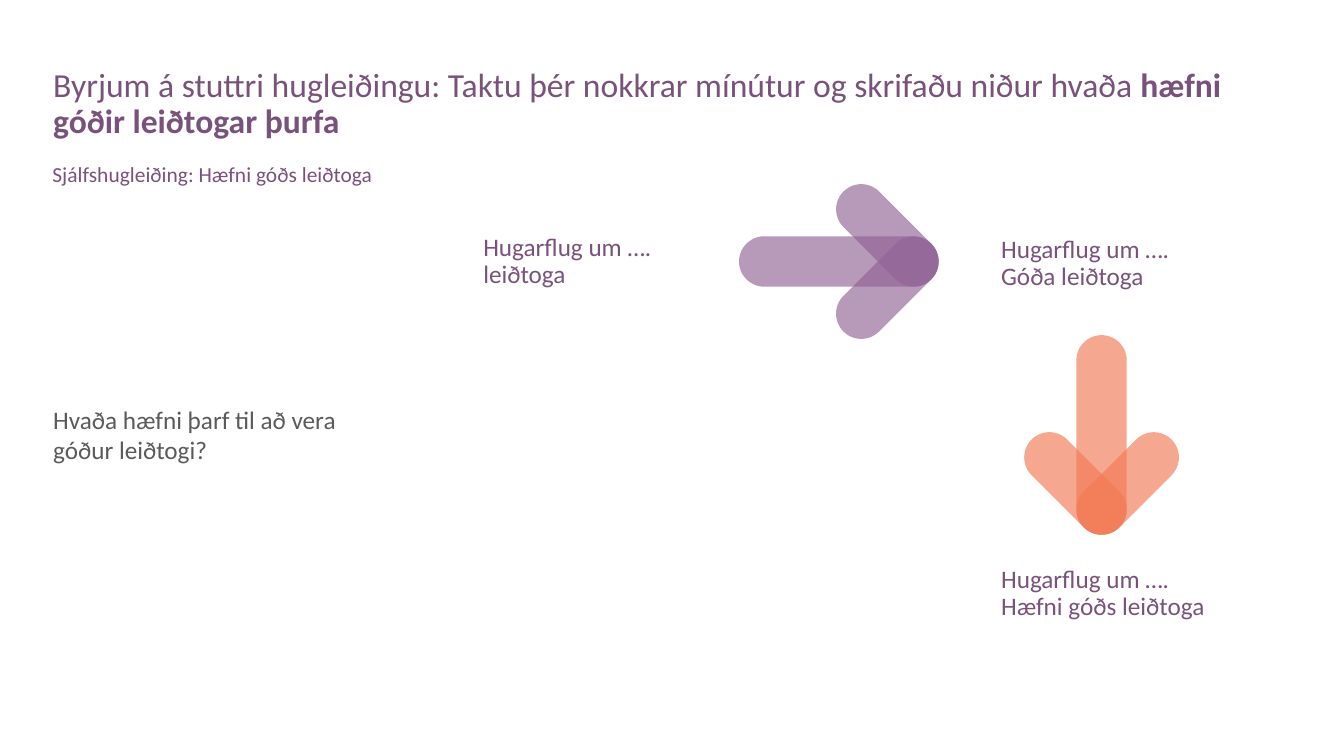
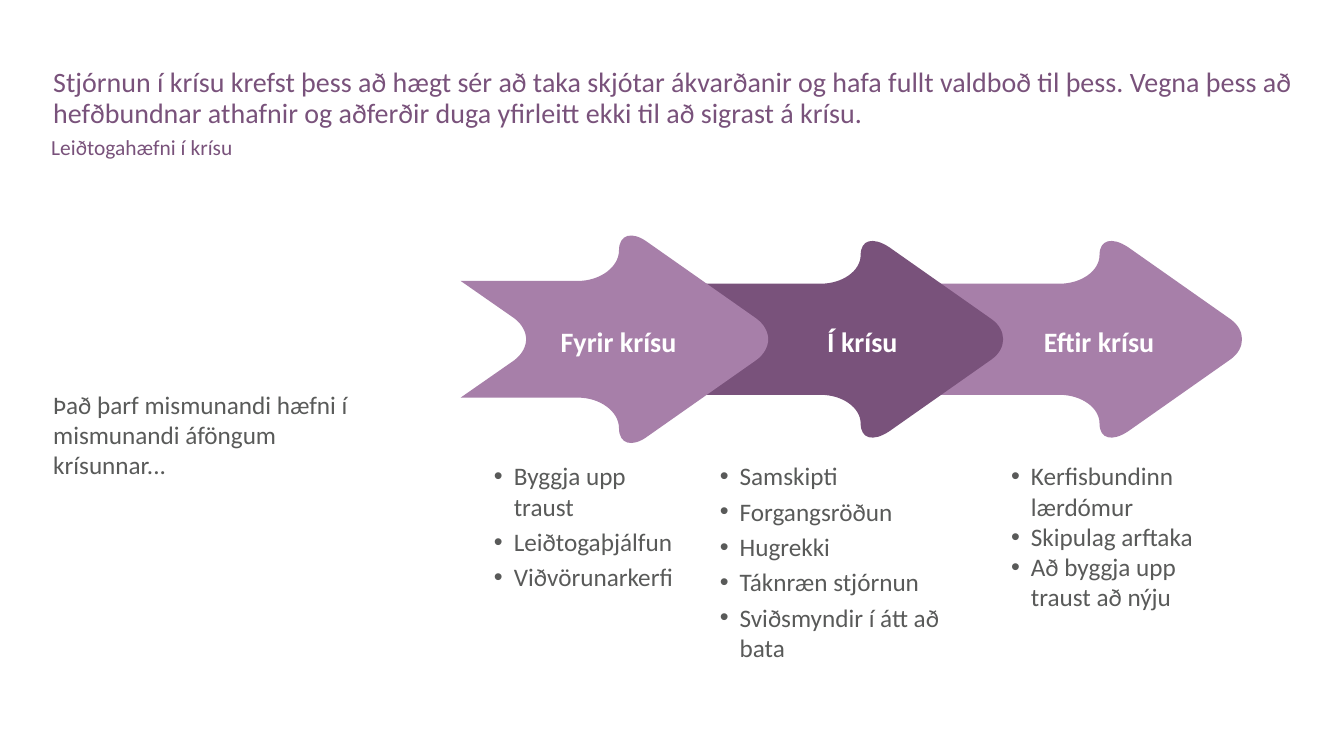
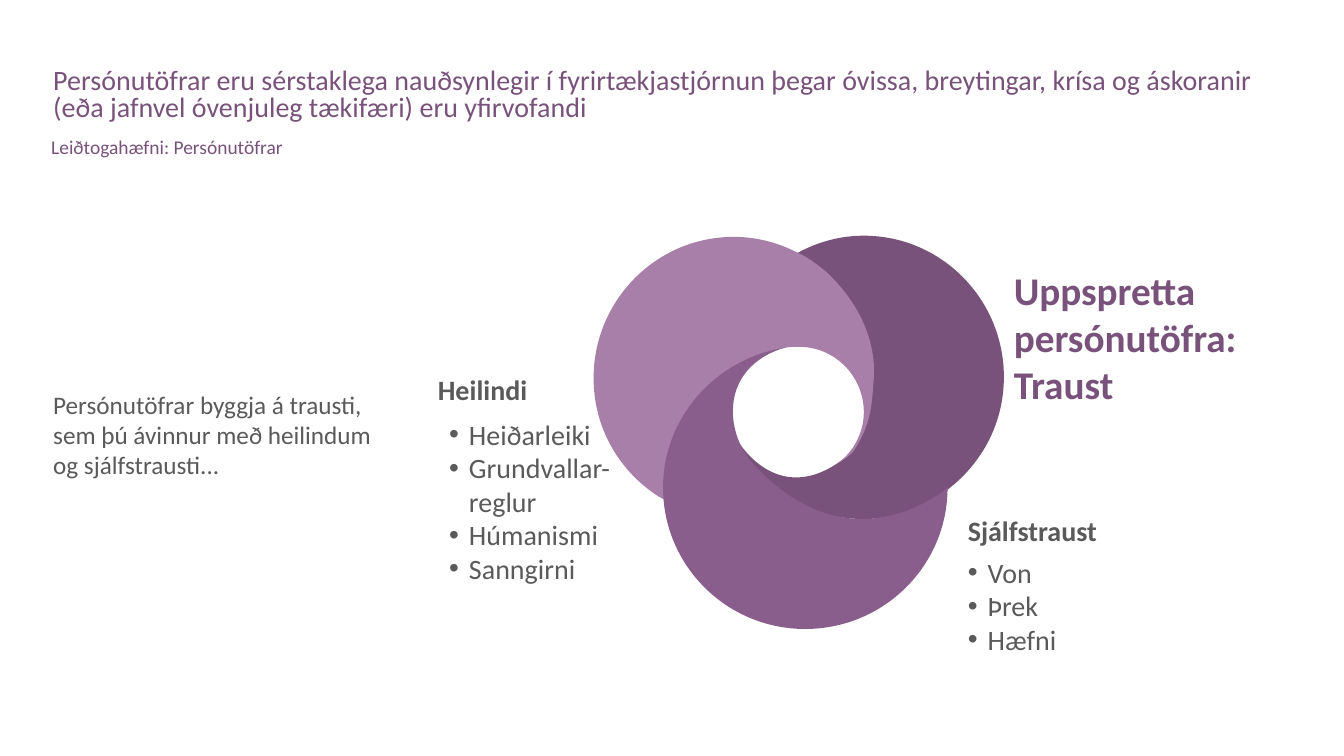
"""Build three slides on the skills of a good leader."""
from math import cos, radians, sin

from lxml.etree import SubElement as Sub
from pptx import Presentation
from pptx.dml.color import RGBColor as Rgb
from pptx.enum.shapes import MSO_SHAPE as Kind
from pptx.enum.text import MSO_ANCHOR as Anchor, MSO_AUTO_SIZE as Fit, PP_ALIGN as Align
from pptx.oxml.ns import qn
from pptx.util import Cm, Pt

PLUM = Rgb(0x79, 0x52, 0x7B)
LILAC = Rgb(0xA7, 0x7F, 0xA9)
GRAPE = Rgb(0x89, 0x5E, 0x8C)
VIOLET = Rgb(0x91, 0x63, 0x95)
CORAL = Rgb(0xF2, 0x79, 0x54)
GRAY = Rgb(0x59, 0x5A, 0x59)
WHITE = Rgb(0xFF, 0xFF, 0xFF)
FONT = "Calibri"

PAGES = [
    dict(
        head=[("Byrjum á stuttri hugleiðingu: Taktu þér nokkrar mínútur og skrifaðu niður hvaða ", False),
              ("hæfni góðir leiðtogar þurfa", True)],
        head_size=24, head_lead=0.9, head_high=2.11,
        sub="Sjálfshugleiðing: Hæfni góðs leiðtoga", sub_at=(1.07, 4.11), sub_size=15.3,
        side="Hvaða hæfni þarf til að vera góður leiðtogi?",
    ),
    dict(
        head="Stjórnun í krísu krefst þess að hægt sér að taka skjótar ákvarðanir og hafa fullt "
             "valdboð til þess. Vegna þess að hefðbundnar athafnir og aðferðir duga yfirleitt "
             "ekki til að sigrast á krísu.",
        head_size=20, head_lead=0.9, head_high=1.63,
        sub="Leiðtogahæfni í krísu", sub_at=(1.04, 3.43), sub_size=15.3,
        side="Það þarf mismunandi hæfni í mismunandi áföngum krísunnar...",
    ),
    dict(
        head="Persónutöfrar eru sérstaklega nauðsynlegir í fyrirtækjastjórnun þegar óvissa, "
             "breytingar, krísa og áskoranir (eða jafnvel óvenjuleg tækifæri) eru yfirvofandi",
        head_size=20, head_lead=0.8, head_high=1.63,
        sub="Leiðtogahæfni: Persónutöfrar", sub_at=(1.04, 3.43), sub_size=13.9,
        side="Persónutöfrar byggja á trausti, sem þú ávinnur með heilindum og sjálfstrausti...",
    ),
]

STORMS = [
    ((11.93, 5.79, 7.29, 2.67), "leiðtoga"),
    ((24.98, 5.84, 7.98, 1.98), "Góða leiðtoga"),
    ((24.98, 14.15, 7.98, 1.98), "Hæfni góðs leiðtoga"),
]
ARROWS = [((23.02, 6.59), 0, VIOLET), ((27.76, 12.84), 90, CORAL)]
THICK = 1.27
BARS = [(5.03, 0), (3.13, -45), (3.13, 45)]

MID = 8.55
NOTCHED = [
    (1.65, 0), (1.65, -0.18, 1.55, -0.38, 1.35, -0.53), (0, -1.47), (2.95, -1.47),
    (3.53, -1.47, 3.99, -1.83, 3.99, -2.24), (3.99, -2.64, 4.32, -2.74, 4.72, -2.44),
    (7.44, -0.53), (7.65, -0.38, 7.75, -0.18, 7.75, 0),
]
BLUNT = [
    (0, 0), (0, -0.71), (0, -1.09, 0.43, -1.4, 0.99, -1.4), (3.99, -1.4),
    (4.55, -1.4, 5, -1.73, 5, -2.12), (5, -2.51, 5.31, -2.59, 5.72, -2.32),
    (8.31, -0.5), (8.5, -0.36, 8.59, -0.18, 8.59, 0),
]
STEPS = [
    dict(name="Fyrir krísu", half=NOTCHED, left=11.61, fill=LILAC, tag=(13.56, 4.06),
         box=(12.22, 5.08, 3.58), gap=3.6,
         items=["Byggja upp traust", "Leiðtogaþjálfun", "Viðvörunarkerfi"]),
    dict(name="Í krísu", half=BLUNT, left=16.69, fill=PLUM, tag=(19.46, 4.55),
         box=(17.91, 6.25, 5.41), gap=3.6,
         items=["Samskipti", "Forgangsröðun", "Hugrekki", "Táknræn stjórnun",
                "Sviðsmyndir í átt að bata"]),
    dict(name="Eftir krísu", half=BLUNT, left=22.71, fill=LILAC, tag=(25.68, 4.04),
         box=(25.25, 5.38, 4.06), gap=0,
         items=["Kerfisbundinn lærdómur", "Skipulag arftaka", "Að byggja upp traust að nýju"]),
]

SWIRL = [
    (PLUM, [
        (21.77, 5.94), (21.16, 5.94, 20.6, 6.1, 20.09, 6.38),
        (20.32, 6.48, 20.52, 6.63, 20.73, 6.78), (21.49, 7.44, 22.07, 8.46, 22, 9.55),
        (21.95, 10.19, 21.95, 10.69, 21.46, 11.4), (19.66, 12.98, 18.59, 11.1, 18.59, 11.1),
        (18.77, 12.12, 20.04, 12.67, 20.04, 12.67), (20.52, 12.93, 21.18, 13.08, 21.77, 13.08),
        (22.45, 13.08, 23.09, 12.85, 23.65, 12.5), (24.64, 11.86, 25.3, 10.77, 25.3, 9.5),
        (25.3, 7.54, 23.72, 5.94, 21.77, 5.94)]),
    (LILAC, [
        (19.81, 8.76), (19.91, 8.74, 20.02, 8.74, 20.14, 8.74),
        (21.03, 8.74, 21.77, 9.47, 21.77, 10.39), (21.77, 10.92, 21.49, 11.43, 21.06, 11.71),
        (21.21, 11.63, 21.34, 11.53, 21.49, 11.4), (21.97, 10.69, 21.97, 10.19, 22.02, 9.55),
        (22.1, 8.46, 21.51, 7.44, 20.73, 6.78), (20.55, 6.63, 20.35, 6.48, 20.12, 6.38),
        (19.63, 6.12, 19.08, 5.97, 18.49, 5.97), (16.54, 5.97, 14.96, 7.57, 14.96, 9.53),
        (14.96, 10.8, 15.62, 11.89, 16.61, 12.52), (16.66, 12.55, 16.71, 12.57, 16.76, 12.6),
        (16.74, 12.5, 16.74, 12.4, 16.74, 12.29), (16.74, 10.49, 18.11, 9.02, 19.81, 8.76)]),
    (GRAPE, [
        (19, 11.71), (19, 11.71, 18.47, 11.2, 18.47, 10.36),
        (18.47, 9.58, 18.97, 8.99, 19.79, 8.76), (18.08, 9.02, 16.71, 10.49, 16.71, 12.29),
        (16.71, 14.25, 18.31, 15.85, 20.29, 15.85), (22.28, 15.85, 23.88, 14.25, 23.88, 12.29),
        (23.88, 12.29, 21.49, 14.4, 19, 11.71)]),
]
SOURCE = ((25.3, 6.58, 6.55, 3.84), "Uppspretta persónutöfra: Traust")
TRAITS = [
    ("Sjálfstraust", (24.14, 12.8, 4.06, 1.12), Align.LEFT,
     (24.29, 13.94, 5.49, 2.67), ["Von", "Þrek", "Hæfni"]),
    ("Heilindi", (10.26, 9.26, 3.28, 1.12), Align.RIGHT,
     (11.22, 10.46, 5.49, 4.37), ["Heiðarleiki", "Grundvallar-reglur", "Húmanismi", "Sanngirni"]),
]


def put(thing, **vals):
    for key, val in vals.items():
        setattr(thing, key, val)


def place(shape, box):
    put(shape, **dict(zip(("left", "top", "width", "height"), map(Cm, box))))


def write(shape, paras, size, color, bold=False, lead=1.0, gap=0, dots=False,
          align=Align.LEFT, anchor=Anchor.TOP, inset=(0.25, 0.13)):
    frame = shape.text_frame
    wide, high = map(Cm, inset)
    put(frame, word_wrap=True, auto_size=Fit.NONE, vertical_anchor=anchor,
        margin_left=wide, margin_right=wide, margin_top=high, margin_bottom=high)
    for num, runs in enumerate(paras):
        para = frame.add_paragraph() if num else frame.paragraphs[0]
        props = para._p.get_or_add_pPr()
        dent = Cm(0.5) if dots else 0
        props.set("marL", str(dent))
        props.set("indent", str(-dent))
        if dots:
            Sub(props, qn("a:buFont")).set("typeface", "Arial")
            Sub(props, qn("a:buChar")).set("char", "•")
        else:
            Sub(props, qn("a:buNone"))
        put(para, alignment=align, line_spacing=lead, space_before=Pt(gap if num else 0))
        for text, heavy in [(runs, bold)] if isinstance(runs, str) else runs:
            run = para.add_run()
            run.text = text
            put(run.font, name=FONT, size=Pt(size), bold=heavy)
            run.font.color.rgb = color


def note(slide, box, paras, size, color, **style):
    write(slide.shapes.add_textbox(*map(Cm, box)), paras, size, color, **style)


def paint(shape, color, alpha=None):
    shape.shadow.inherit = False
    shape.fill.solid()
    shape.fill.fore_color.rgb = color
    shape.line.fill.background()
    if alpha:
        tone = shape.fill._xPr.find(".//" + qn("a:srgbClr"))
        Sub(tone, qn("a:alpha")).set("val", str(alpha * 1000))


def split(parts):
    dots = [pair for part in parts for pair in zip(part[::2], part[1::2])]
    return dots, [len(part) // 2 for part in parts[1:]]


def outline(slide, dots, sizes, color):
    first, *rest = [(Cm(x), Cm(y)) for x, y in dots]
    pen = slide.shapes.build_freeform(*first, scale=1.0)
    pen.add_line_segments(rest, close=False)
    shape = pen.convert_to_shape()
    trail = shape._element.find(".//" + qn("a:path"))
    lines = iter(trail.findall(qn("a:lnTo")))
    for size in sizes:
        bend = Sub(trail, qn("a:cubicBezTo" if size == 3 else "a:lnTo"))
        for _ in range(size):
            line = next(lines)
            bend.append(line[0])
            trail.remove(line)
    Sub(trail, qn("a:close"))
    paint(shape, color)


def arrow(slide, tip, angle, color):
    for length, turn in BARS:
        way, reach = radians(angle + turn), (length - THICK) / 2
        left = tip[0] - reach * cos(way) - length / 2
        top = tip[1] - reach * sin(way) - THICK / 2
        bar = slide.shapes.add_shape(Kind.ROUNDED_RECTANGLE, *map(Cm, (left, top, length, THICK)))
        bar.adjustments[0] = 0.5
        bar.rotation = angle + turn
        paint(bar, color, 65)


def start(deck, page):
    slide = deck.slides.add_slide(deck.slide_layouts[3])
    head, sub, side = slide.placeholders
    place(head, (1.09, 1.6, 31.85, page["head_high"]))
    place(sub, (*page["sub_at"], 31.9, 0.71))
    place(side, (1.09, 4.55, 8.86, 12.8))
    write(head, [page["head"]], page["head_size"], PLUM, lead=page["head_lead"])
    write(sub, [page["sub"]], page["sub_size"], PLUM, lead=0.7)
    write(side, [page["side"]], 18, GRAY, anchor=Anchor.MIDDLE)
    return slide


def storm(slide):
    for tip, angle, color in ARROWS:
        arrow(slide, tip, angle, color)
    for box, topic in STORMS:
        note(slide, box, ["Hugarflug um ….", topic], 18, PLUM, lead=0.9)


def crisis(slide):
    for step in reversed(STEPS):
        upper, sizes = split(step["half"])
        lower = [(x, -y) for x, y in upper[-2::-1]]
        dots = [(step["left"] + x, MID + y) for x, y in upper + lower]
        outline(slide, dots, sizes + sizes[::-1], step["fill"])
    for step in STEPS:
        left, width = step["tag"]
        note(slide, (left, 8.05, width, 1.12), [step["name"]], 20, WHITE, bold=True,
             align=Align.CENTER, anchor=Anchor.MIDDLE)
        left, width, height = step["box"]
        note(slide, (left, 11.51, width, height), step["items"], 18, GRAY, dots=True,
             gap=step["gap"], inset=(0.23, 0.1))


def charm(slide):
    for color, parts in SWIRL:
        outline(slide, *split(parts), color)
    box, text = SOURCE
    note(slide, box, [text], 28, PLUM, bold=True)
    for name, spot, align, box, items in TRAITS:
        note(slide, spot, [name], 20, GRAY, bold=True, align=align)
        note(slide, box, items, 20, GRAY, dots=True, inset=(0.1, 0.05))


def main():
    deck = Presentation()
    put(deck, slide_width=Cm(33.87), slide_height=Cm(19.05))
    for page, draw in zip(PAGES, (storm, crisis, charm)):
        draw(start(deck, page))
    deck.save("out.pptx")


if __name__ == "__main__":
    main()
